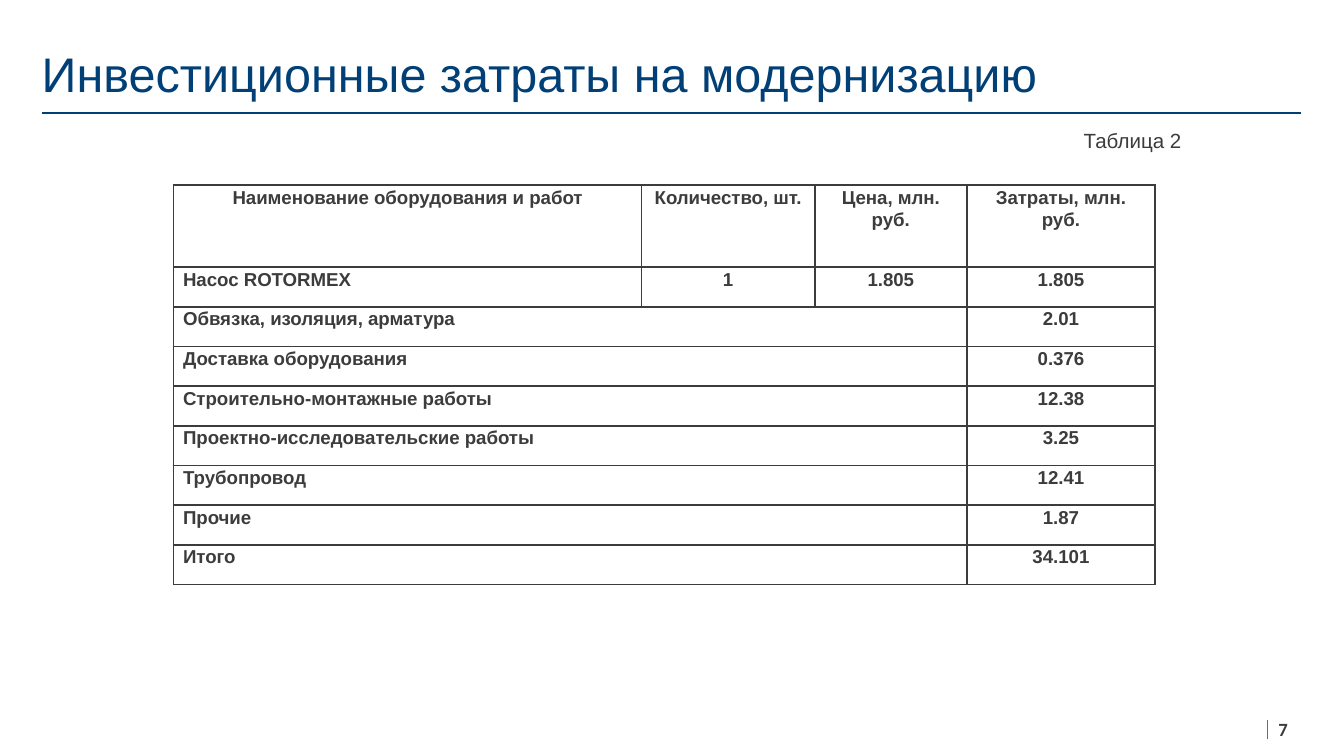
import pptx
import pptx.dml.color
import pptx.enum.shapes
import pptx.enum.text
import pptx.oxml
import pptx.oxml.ns
import pptx.util

Cm, Pt = pptx.util.Cm, pptx.util.Pt
ALIGN, ANCHOR = pptx.enum.text.PP_ALIGN, pptx.enum.text.MSO_ANCHOR
NAVY, DARK, GREY = "004077", "3C3C3C", "706F6F"


def color(value):
    return pptx.dml.color.RGBColor.from_string(value)


class Deck:
    """Holds the text style and the current slide and draws its elements."""

    font = "Arial"
    ink = DARK

    def __init__(self, prs):
        self.slide = prs.slides.add_slide(prs.slide_layouts[6])

    def add_text(self, tf, text, size, ink=None, font=None, bold=False, align=ALIGN.LEFT, spacing=1.0):
        p = tf.paragraphs[0]
        p.alignment = align
        p.line_spacing = spacing
        r = p.add_run()
        r.text = text
        r.font.size = Pt(size)
        r.font.name = font or self.font
        r.font.bold = bold
        r.font.color.rgb = color(ink or self.ink)

    def text_box(self, x, y, w, h, text, size, inset=0, anchor=ANCHOR.TOP, wrap=False, **style):
        tf = self.slide.shapes.add_textbox(Cm(x), Cm(y), Cm(w), Cm(h)).text_frame
        tf.margin_left = tf.margin_right = tf.margin_top = tf.margin_bottom = Cm(inset)
        tf.vertical_anchor = anchor
        tf.word_wrap = wrap
        self.add_text(tf, text, size, **style)

    def line(self, x1, y1, x2, y2, ink, width):
        straight = pptx.enum.shapes.MSO_CONNECTOR.STRAIGHT
        sp = self.slide.shapes.add_connector(straight, Cm(x1), Cm(y1), Cm(x2), Cm(y2))
        sp.line.color.rgb = color(ink)
        sp.line.width = Pt(width)
        sp._element.spPr.append(pptx.oxml.parse_xml(f'<a:effectLst {pptx.oxml.ns.nsdecls("a")}/>'))

    def borders(self, cell, width=1):
        tc_pr = cell._tc.get_or_add_tcPr()
        for i, side in enumerate(("lnL", "lnR", "lnT", "lnB")):
            tc_pr.insert(i, pptx.oxml.parse_xml(
                f'<a:{side} {pptx.oxml.ns.nsdecls("a")} w="{Pt(width)}"><a:solidFill>'
                f'<a:srgbClr val="{self.ink}"/></a:solidFill></a:{side}>'))

    def table(self, x, y, widths, heights, rows):
        table = self.slide.shapes.add_table(
            len(rows), len(widths), Cm(x), Cm(y), Cm(sum(widths)), Cm(sum(heights))).table
        table.first_row = table.horz_banding = False
        for column, width in zip(table.columns, widths):
            column.width = Cm(width)
        for row, height in zip(table.rows, heights):
            row.height = Cm(height)
        for i, values in enumerate(rows):
            if len(values) == 2:
                table.cell(i, 0).merge(table.cell(i, len(widths) - 2))
                values = (values[0], None, None, values[1])
            for j, value in enumerate(values):
                cell = table.cell(i, j)
                cell.fill.background()
                self.borders(cell)
                cell.margin_left = cell.margin_right = Cm(0.18)
                cell.margin_top = cell.margin_bottom = 0
                if value:
                    align = ALIGN.LEFT if i and j == 0 else ALIGN.CENTER
                    self.add_text(cell.text_frame, value, 10, bold=True, align=align, spacing=1.1)


def main():
    prs = pptx.Presentation()
    prs.slide_width, prs.slide_height = Cm(25.4), Cm(14.29)
    deck = Deck(prs)
    deck.line(0.79, 2.14, 24.59, 2.14, NAVY, 1)
    deck.line(23.95, 13.61, 23.95, 13.97, GREY, 0.75)
    deck.text_box(24.16, 13.59, 0.43, 0.38, "7", 10, anchor=ANCHOR.MIDDLE, font="Calibri", bold=True)
    deck.text_box(0.79, 0.25, 23.77, 1.7, "Инвестиционные затраты на модернизацию", 26,
                  anchor=ANCHOR.BOTTOM, wrap=True, ink=NAVY, spacing=0.9)
    deck.text_box(20.35, 2.29, 2.16, 0.74, "Таблица 2", 11, inset=0.13)
    rows = [
        ("Наименование оборудования и работ", "Количество, шт.", "Цена, млн. руб.", "Затраты, млн. руб."),
        ("Насос ROTORMEX", "1", "1.805", "1.805"),
        ("Обвязка, изоляция, арматура", "2.01"),
        ("Доставка оборудования", "0.376"),
        ("Строительно-монтажные работы", "12.38"),
        ("Проектно-исследовательские работы", "3.25"),
        ("Трубопровод", "12.41"),
        ("Прочие", "1.87"),
        ("Итого", "34.101"),
    ]
    deck.table(3.28, 3.5, (8.84, 3.28, 2.87, 3.56), [1.55] + [0.75] * (len(rows) - 1), rows)
    prs.save("out.pptx")


if __name__ == "__main__":
    main()
